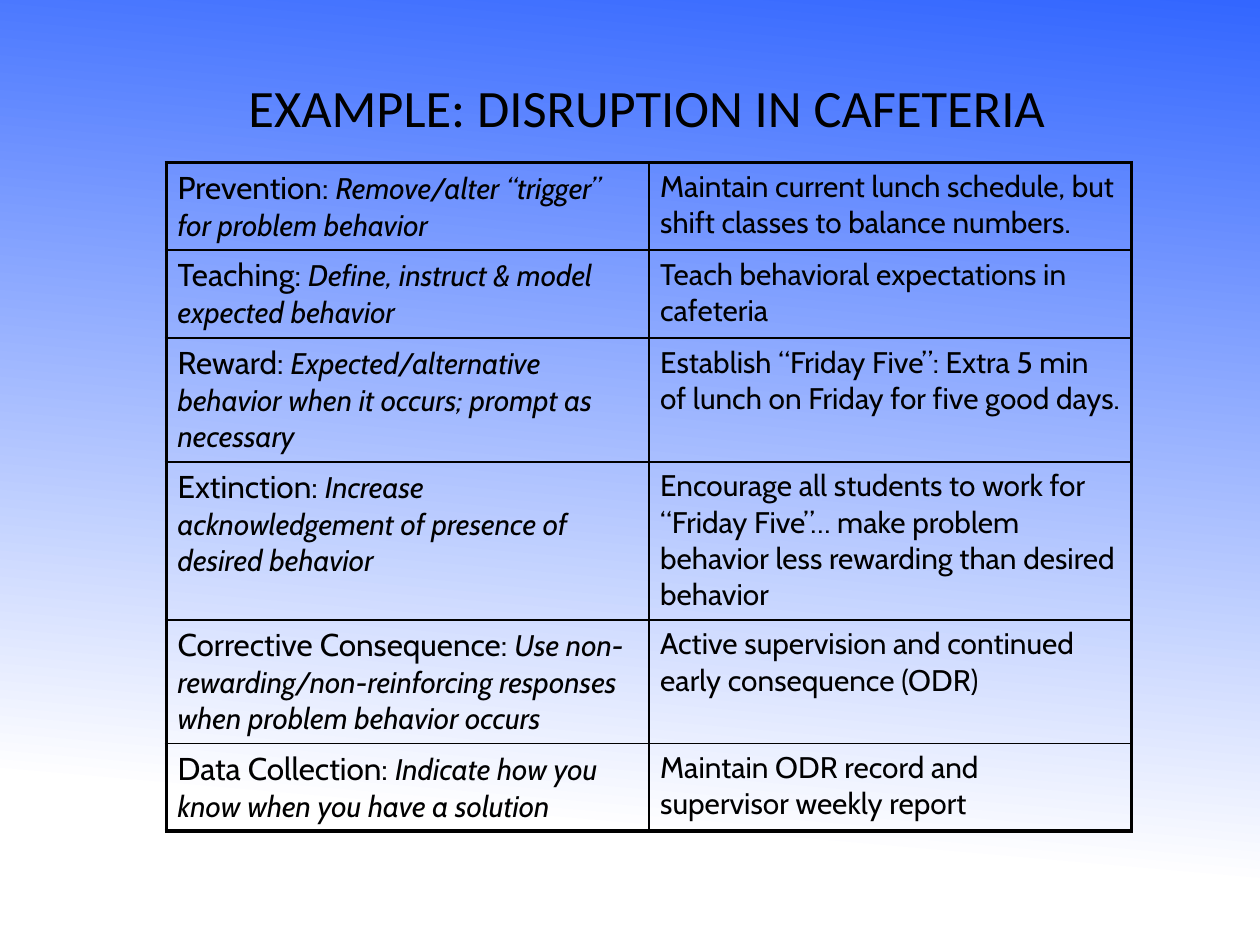
from lxml import etree
from pptx import Presentation
from pptx import util as u
from pptx.dml.color import RGBColor
from pptx.enum import text
from pptx.oxml import ns

THEME = {
    "ink": RGBColor(0x00, 0x00, 0x00),
    "sky": RGBColor(0x33, 0x66, 0xFF),
    "white": RGBColor(0xFF, 0xFF, 0xFF),
    "title_font": "Calibri",
    "table_font": "Cabin",
    "title_size": u.Pt(30),
    "label_size": u.Pt(18),
    "text_size": u.Pt(17),
    "outer_line": u.Pt(2.25),
    "inner_line": u.Pt(1),
}

PLAN = [
    ("Prevention: ", "Remove/alter “trigger” for problem behavior",
     "Maintain current lunch schedule, but shift classes to balance numbers."),
    ("Teaching: ", "Define, instruct & model expected behavior",
     "Teach behavioral expectations in cafeteria"),
    ("Reward: ", "Expected/alternative behavior when it occurs; prompt as necessary",
     "Establish “Friday Five”: Extra 5 min of lunch on Friday for five good days."),
    ("Extinction: ", "Increase acknowledgement of presence of desired behavior",
     "Encourage all students to work for “Friday Five”… make problem behavior "
     "less rewarding than desired behavior"),
    ("Corrective Consequence: ",
     "Use non-rewarding/non-reinforcing responses when problem behavior occurs",
     "Active supervision and continued early consequence (ODR)"),
    ("Data Collection: ", "Indicate how you know when you have a solution",
     "Maintain ODR record and\vsupervisor weekly report"),
]
ROW_HEIGHTS = [0.68, 0.7, 0.96, 1.22, 0.96, 0.68]
COLUMN_WIDTH = 3.83


def add_border(cell, side, width):
    properties = cell._tc.get_or_add_tcPr()
    line = etree.SubElement(properties, ns.qn(f"a:ln{side}"), w=str(int(width)))
    fill = etree.SubElement(line, ns.qn("a:solidFill"))
    etree.SubElement(fill, ns.qn("a:srgbClr"), val=str(THEME["ink"]))


presentation = Presentation()
presentation.slide_width = u.Inches(10)
presentation.slide_height = u.Inches(7.5)
slide = presentation.slides.add_slide(presentation.slide_layouts[5])

# Background: white rising to blue
background = slide.background.fill
background.gradient()
background.gradient_angle = 85
low, high = background.gradient_stops
low.position, low.color.rgb = 0.16, THEME["white"]
high.position, high.color.rgb = 1, THEME["sky"]

# Title
title = slide.shapes.title
title.left, title.top = u.Inches(0.53), u.Inches(0.6)
title.width, title.height = u.Inches(7.87), u.Inches(1.06)
frame = title.text_frame
frame.text = "EXAMPLE: DISRUPTION IN CAFETERIA"
frame.word_wrap = True
frame.auto_size = text.MSO_AUTO_SIZE.NONE
frame.vertical_anchor = text.MSO_ANCHOR.TOP
paragraph = frame.paragraphs[0]
paragraph.alignment = text.PP_ALIGN.RIGHT
paragraph.line_spacing = 0.9
paragraph.font.name = THEME["title_font"]
paragraph.font.size = THEME["title_size"]
paragraph.font.color.rgb = THEME["ink"]

# Table grid
table = slide.shapes.add_table(
    len(PLAN), 2, u.Inches(1.32), u.Inches(1.29),
    u.Inches(2 * COLUMN_WIDTH), u.Inches(sum(ROW_HEIGHTS))).table
table.first_row = table.horz_banding = False
for column in table.columns:
    column.width = u.Inches(COLUMN_WIDTH)
for row, height in zip(table.rows, ROW_HEIGHTS):
    row.height = u.Inches(height)

# Table text, borders and fills
for row_index, (label, strategy, action) in enumerate(PLAN):
    for column_index in range(2):
        cell = table.cell(row_index, column_index)
        cell.margin_left = cell.margin_right = u.Inches(0.09)
        cell.margin_top = cell.margin_bottom = u.Inches(0.05)
        paragraph = cell.text_frame.paragraphs[0]
        if column_index == 0:
            label_run, strategy_run = paragraph.add_run(), paragraph.add_run()
            label_run.text, strategy_run.text = label, strategy
            label_run.font.size = THEME["label_size"]
            strategy_run.font.italic = True
        else:
            paragraph.text = action
        paragraph.font.name = THEME["table_font"]
        paragraph.font.size = THEME["text_size"]
        paragraph.font.color.rgb = THEME["ink"]

        outer_sides = {
            "L": column_index == 0,
            "R": column_index == 1,
            "T": row_index == 0,
            "B": row_index == len(PLAN) - 1,
        }
        for side, is_outer in outer_sides.items():
            add_border(cell, side, THEME["outer_line" if is_outer else "inner_line"])
        cell.fill.background()

presentation.save("out.pptx")
